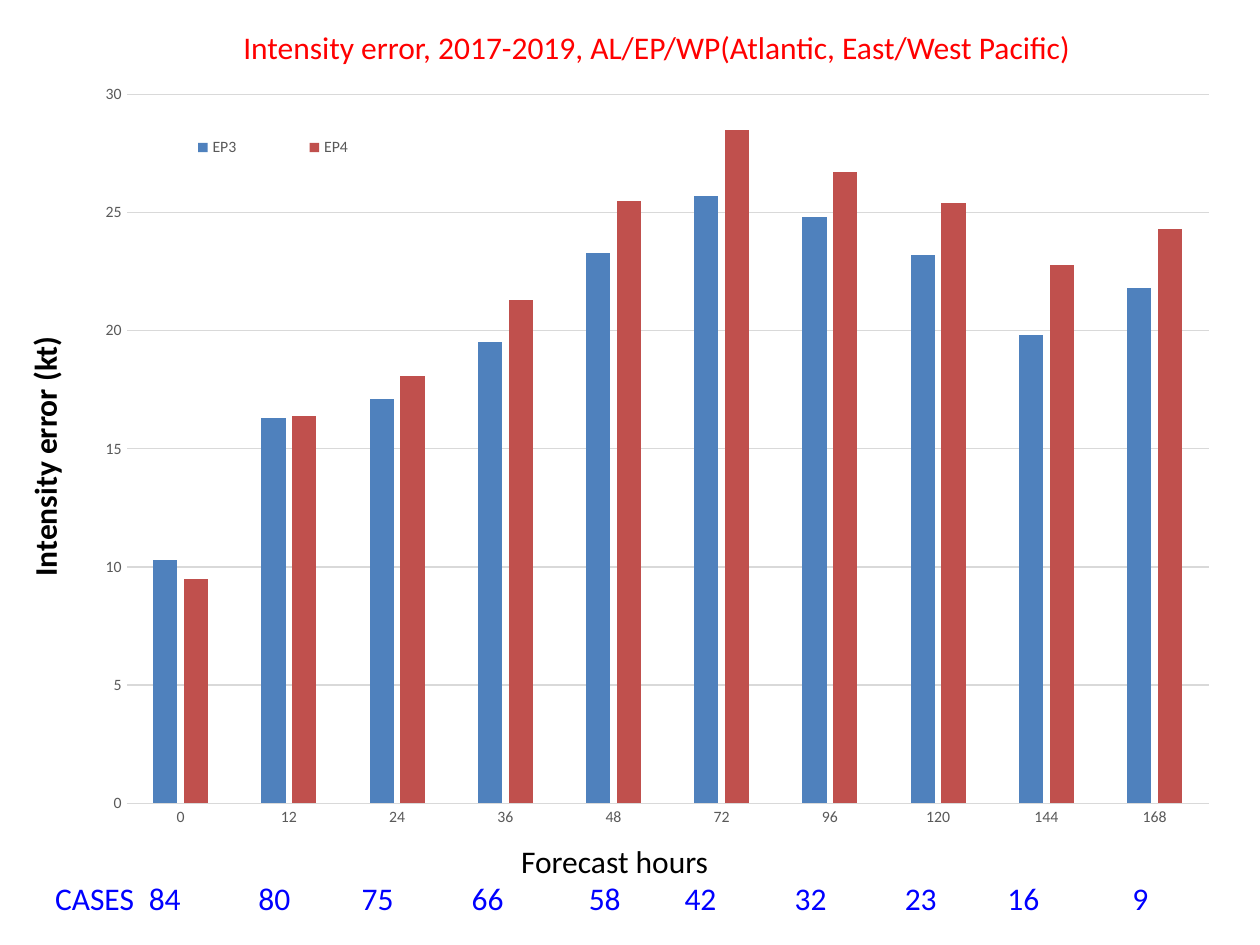
from lxml import etree
from pptx import Presentation
from pptx import util as u
from pptx.chart.data import CategoryChartData
from pptx.dml.color import RGBColor
from pptx.enum import chart as ch, text
from pptx.oxml.ns import qn

COLORS = {"title": "FF0000", "cases": "0000FF", "text": "000000", "label": "595959",
          "grid": "D9D9D9", "EP3": "4F81BD", "EP4": "C0504D"}
HOURS = [0, 12, 24, 36, 48, 72, 96, 120, 144, 168]
ERRORS = {"EP3": [10.3, 16.3, 17.1, 19.5, 23.3, 25.7, 24.8, 23.2, 19.8, 21.8],
          "EP4": [9.5, 16.4, 18.1, 21.3, 25.5, 28.5, 26.7, 25.4, 22.8, 24.3]}
CASES = [84, 80, 75, 66, 58, 42, 32, 23, 16, 9]
CASE_TABS = [1.89, 4.1, 6.18, 8.4, 10.76, 12.69, 14.91, 17.13, 19.2, 21.72]


class SlideBuilder:
    def __init__(self, slide, font="Calibri", size=18):
        self.slide, self.font, self.size = slide, font, size

    def style(self, font, color, size=None, bold=False):
        font.name, font.size, font.bold = self.font, u.Pt(size or self.size), bold
        font.color.rgb = RGBColor.from_string(COLORS[color])

    def add_text(self, paragraph, words, color, bold=False, align=text.PP_ALIGN.LEFT):
        paragraph.alignment = align
        run = paragraph.add_run()
        run.text = words
        self.style(run.font, color, bold=bold)

    def title(self, words, left, top, width, height):
        title = self.slide.shapes.title
        title.left, title.top, title.width, title.height = map(u.Cm, (left, top, width, height))
        frame = title.text_frame
        frame.word_wrap, frame.auto_size = True, text.MSO_AUTO_SIZE.SHAPE_TO_FIT_TEXT
        self.add_text(frame.paragraphs[0], words, "title")

    def box(self, left, top, width, height, wrap=True, rotation=0):
        box = self.slide.shapes.add_textbox(*map(u.Cm, (left, top, width, height)))
        box.rotation = rotation
        box.text_frame.word_wrap = wrap
        box.text_frame.auto_size = text.MSO_AUTO_SIZE.SHAPE_TO_FIT_TEXT
        return box.text_frame

    def tab_stops(self, paragraph, stops):
        tabs = etree.SubElement(paragraph._p.get_or_add_pPr(), qn("a:tabLst"))
        for stop in stops:
            etree.SubElement(tabs, qn("a:tab"), pos=str(int(u.Cm(stop))), algn="l")

    def place(self, part, index, x, y, w, h, inner=False):
        """Give a chart part a fixed place, in fractions of the chart."""
        for old in part.findall(qn("c:layout")):
            part.remove(old)
        layout = etree.Element(qn("c:layout"))
        part.insert(index, layout)
        manual = etree.SubElement(layout, qn("c:manualLayout"))
        settings = {"layoutTarget": "inner"} if inner else {}
        settings.update(xMode="edge", yMode="edge", x=x, y=y, w=w, h=h)
        for tag, value in settings.items():
            etree.SubElement(manual, qn("c:" + tag), val=str(value))

    def column_chart(self, categories, series, left, top, width, height):
        data = CategoryChartData()
        data.categories = [str(category) for category in categories]
        for name, values in series.items():
            data.add_series(name, values)
        chart = self.slide.shapes.add_chart(
            ch.XL_CHART_TYPE.COLUMN_CLUSTERED, *map(u.Cm, (left, top, width, height)), data).chart
        self.style(chart.font, "text", 10)
        chart.has_title = False

        # Columns
        plot = chart.plots[0]
        plot.gap_width, plot.overlap, plot.vary_by_categories = 219, -27, False
        for column in plot.series:
            column.format.fill.solid()
            column.format.fill.fore_color.rgb = RGBColor.from_string(COLORS[column.name])

        # Axes and grid
        hours, error = chart.category_axis, chart.value_axis
        for axis in (hours, error):
            axis.major_tick_mark = axis.minor_tick_mark = ch.XL_TICK_MARK.NONE
            self.style(axis.tick_labels.font, "label", 9)
        error.minimum_scale, error.maximum_scale, error.major_unit = 0, 30, 5
        error.has_major_gridlines = True
        error.format.line.fill.background()
        for line in (hours.format.line, error.major_gridlines.format.line):
            line.color.rgb = RGBColor.from_string(COLORS["grid"])
            line.width = u.Pt(0.75)

        # Legend inside the plot area
        chart.has_legend = True
        chart.legend.position = ch.XL_LEGEND_POSITION.BOTTOM
        chart.legend.include_in_layout = False
        self.style(chart.legend.font, "label", 9)
        self.place(chart.legend._element, 1, 0.04, 0.07, 0.25, 0.05)
        plot_area = chart._chartSpace.chart.plotArea
        self.place(plot_area, 0, 0.037, 0.025, 0.946, 0.933, inner=True)


def main():
    deck = Presentation()
    deck.slide_width, deck.slide_height = u.Cm(25.4), u.Cm(19.05)
    builder = SlideBuilder(deck.slides.add_slide(deck.slide_layouts[5]))

    # Title
    builder.title("Intensity error, 2017-2019, AL/EP/WP(Atlantic, East/West Pacific)",
                  4.65, 0.43, 17.98, 1.02)

    # Vertical axis caption
    caption = builder.box(-1.78, 8.66, 5.38, 1.04, wrap=False, rotation=270)
    builder.add_text(caption.paragraphs[0], "Intensity error (kt)", "text", bold=True)

    # Horizontal axis caption and number of cases per forecast hour
    footer = builder.box(0.86, 16.84, 23.06, 1.8)
    builder.add_text(footer.paragraphs[0], "Forecast hours", "text", align=text.PP_ALIGN.CENTER)
    cases = footer.add_paragraph()
    builder.tab_stops(cases, CASE_TABS)
    builder.add_text(cases, "\t".join(["CASES", *map(str, CASES)]), "cases")

    # Intensity error by forecast hour
    builder.column_chart(HOURS, ERRORS, 1.7, 1.52, 23.06, 15.32)

    deck.save("out.pptx")


if __name__ == "__main__":
    main()
